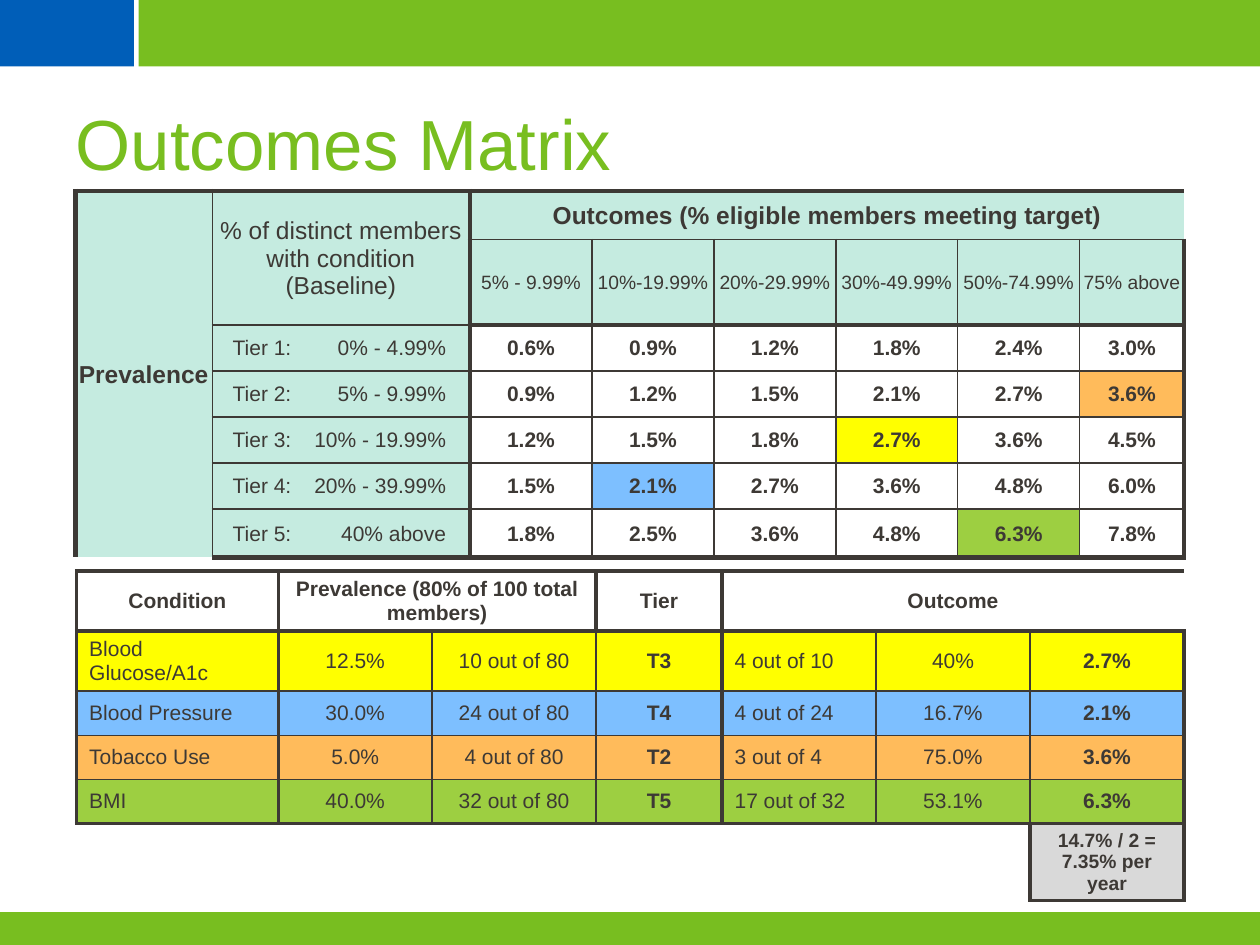
import lxml.etree
import pptx
import pptx.dml.color
import pptx.enum.shapes
import pptx.enum.text
import pptx.oxml.ns
import pptx.util

Pt = pptx.util.Pt
qn = pptx.oxml.ns.qn
ALIGN = pptx.enum.text.PP_ALIGN
MIDDLE = pptx.enum.text.MSO_ANCHOR.MIDDLE
PLAIN = "{2D5ABB26-0587-4C30-8999-92F81FD0307C}"  # no style, no grid

HUES = {
    "green": "78BE20", "blue": "005EB8", "ink": "3D3935", "mint": "C5EBE0",
    "yellow": "FFFF00", "sky": "7DBFFF", "orange": "FFBB5B",
    "lime": "9DCF41", "grey": "D9D9D9",
}
BARS = [("green", (79.2, 0, 640.8, 38)), ("blue", (0, 0, 76.5, 38)),
        ("green", (0, 521.2, 720, 18.8))]

BANDS = ["5% - 9.99%", "10%-19.99%", "20%-29.99%",
         "30%-49.99%", "50%-74.99%", "75% above"]
TIERS = [
    ("Tier 1:\t0% - 4.99%", "0.6% 0.9% 1.2% 1.8% 2.4% 3.0%"),
    ("Tier 2:\t5% - 9.99%", "0.9% 1.2% 1.5% 2.1% 2.7% 3.6%"),
    ("Tier 3:\t10% - 19.99%", "1.2% 1.5% 1.8% 2.7% 3.6% 4.5%"),
    ("Tier 4:\t20% - 39.99%", "1.5% 2.1% 2.7% 3.6% 4.8% 6.0%"),
    ("Tier 5:\t40% above", "1.8% 2.5% 3.6% 4.8% 6.3% 7.8%"),
]
MARKS = {(3, 7): "orange", (4, 5): "yellow", (5, 3): "sky", (6, 6): "lime"}

HEADS = [(0, 1, "Condition"), (1, 2, "Prevalence (80% of 100 total members)"),
         (3, 1, "Tier"), (4, 3, "Outcome")]
CASES = [
    ("yellow", ["Blood Glucose/A1c", "12.5%", "10 out of 80", "T3",
                "4 out of 10", "40%", "2.7%"]),
    ("sky", ["Blood Pressure", "30.0%", "24 out of 80", "T4",
             "4 out of 24", "16.7%", "2.1%"]),
    ("orange", ["Tobacco Use", "5.0%", "4 out of 80", "T2",
                "3 out of 4", "75.0%", "3.6%"]),
    ("lime", ["BMI", "40.0%", "32 out of 80", "T5",
              "17 out of 32", "53.1%", "6.3%"]),
]


def tint(name):
    return pptx.dml.color.RGBColor.from_string(HUES[name])


def apply(item, form):
    for key, value in form.items():
        setattr(item, key, value)


def style(font, hue="ink", **form):
    apply(font, {"name": "Arial", "bold": False, **form})
    font.color.rgb = tint(hue)


def edge(cell, side, width):
    line = lxml.etree.SubElement(cell._tc.get_or_add_tcPr(), qn("a:ln" + side),
                                 w=str(int(Pt(width))))
    fill = lxml.etree.SubElement(line, qn("a:solidFill"))
    lxml.etree.SubElement(fill, qn("a:srgbClr"), val=HUES["ink"])


def make_grid(slide, box, cols, rows):
    frame = slide.shapes.add_table(len(rows), len(cols), *map(Pt, box))
    grid = frame.table
    apply(grid, {"first_row": False, "horz_banding": False})
    grid._tbl.tblPr.find(qn("a:tableStyleId")).text = PLAIN
    for col, width in zip(grid.columns, cols):
        col.width = Pt(width)
    for row, height in zip(grid.rows, rows):
        row.height = Pt(height)
    return grid


def put(grid, row, col, text, rule, span=(1, 1), hue=None, size=12,
        bold=False, align=ALIGN.CENTER, pads=None, tab=None):
    """Fill one cell; rule(axis, row, col) gives the width of a grid line."""
    down, over = span
    cell = grid.cell(row, col)
    if span != (1, 1):
        cell.merge(grid.cell(row + down - 1, col + over - 1))
    # Only the outer edges of a merged area are drawn
    for r in range(row, row + down):
        for c in range(col, col + over):
            part = grid.cell(r, c)
            if c == col:
                edge(part, "L", rule("x", r, c))
            if c == col + over - 1:
                edge(part, "R", rule("x", r, c + 1))
            if r == row:
                edge(part, "T", rule("y", r, c))
            if r == row + down - 1:
                edge(part, "B", rule("y", r + 1, c))
    if hue:
        cell.fill.solid()
        cell.fill.fore_color.rgb = tint(hue)
    else:
        cell.fill.background()
    cell.vertical_anchor = MIDDLE
    for side, gap in (pads or {}).items():
        setattr(cell, "margin_" + side, Pt(gap))
    cell.text_frame.text = text
    para = cell.text_frame.paragraphs[0]
    para.alignment = align
    if tab:
        tabs = lxml.etree.SubElement(para._p.get_or_add_pPr(), qn("a:tabLst"))
        lxml.etree.SubElement(tabs, qn("a:tab"), pos=str(int(Pt(tab))), algn="r")
    for run in para.runs:
        style(run.font, size=Pt(size), bold=bold)
    return cell


def add_bars(slide):
    for hue, box in BARS:
        bar = slide.shapes.add_shape(
            pptx.enum.shapes.MSO_SHAPE.RECTANGLE, *map(Pt, box))
        bar.shadow.inherit = False
        bar.fill.solid()
        bar.fill.fore_color.rgb = tint(hue)
        bar.line.fill.background()


def add_title(slide, box, text):
    title = slide.shapes.title
    apply(title, dict(zip(("left", "top", "width", "height"), map(Pt, box))))
    title.text_frame.text = text
    title.text_frame.vertical_anchor = MIDDLE
    para = title.text_frame.paragraphs[0]
    para.alignment = ALIGN.LEFT
    style(para.runs[0].font, "green", size=Pt(40.5))


def add_matrix(slide, box):
    grid = make_grid(slide, box, [77.8, 147.6] + [69.7] * 5 + [59.7],
                     [27.7, 48.8] + [26.3] * 4 + [27.7])
    pads = {"left": 0.7, "right": 0.7, "top": 0.7, "bottom": 0}

    def rule(axis, row, col):
        if axis == "x":
            return 3 if col in (0, 2, 8) else 0.25 if col == 1 else 1
        return 3 if row in (0, 7) or (row == 2 and col > 1) else 1

    # Heads
    head = {"hue": "mint", "size": 14, "pads": pads}
    side = put(grid, 0, 0, "Prevalence", rule, (7, 1), bold=True, **head)
    side._tc.get_or_add_tcPr().set("vert", "wordArtVert")
    put(grid, 0, 1, "% of distinct members with condition\v(Baseline)",
        rule, (2, 1), **head)
    put(grid, 0, 2, "Outcomes (% eligible members meeting target)",
        rule, (1, 6), bold=True, **head)
    for col, band in enumerate(BANDS, 2):
        put(grid, 1, col, band, rule, hue="mint", size=11, pads=pads)
    # Tiers
    for row, (tier, rates) in enumerate(TIERS, 2):
        put(grid, row, 1, tier, rule, hue="mint", align=ALIGN.LEFT,
            pads={**pads, "left": 12}, tab=122)
        for col, rate in enumerate(rates.split(), 2):
            put(grid, row, col, rate, rule, hue=MARKS.get((row, col)),
                bold=True, pads=pads)


def add_cases(slide, box):
    grid = make_grid(slide, box, [115.2, 88, 93.6, 72, 88, 88, 88],
                     [34.4, 34.4, 25.2, 25.2, 25.2, 44])

    def rule(axis, row, col):
        if axis == "x":
            return 2.25 if col in (0, 1, 4, 7) or row == 5 else 1
        return 2.25 if row in (0, 1, 5, 6) else 1

    # Heads
    for col, over, text in HEADS:
        put(grid, 0, col, text, rule, (1, over), bold=True)
    # Conditions
    for row, (hue, texts) in enumerate(CASES, 1):
        for col, text in enumerate(texts):
            put(grid, row, col, text, rule, hue=hue, bold=col in (3, 6),
                align=ALIGN.LEFT if col in (0, 4) else ALIGN.CENTER)
    # Total
    put(grid, 5, 6, "14.7% / 2 = 7.35% per year", rule, hue="grey",
        size=11, bold=True)


def main():
    deck = pptx.Presentation()
    apply(deck, {"slide_width": Pt(720), "slide_height": Pt(540)})
    slide = deck.slides.add_slide(deck.slide_layouts[5])
    add_bars(slide)
    add_title(slide, (36, 52.6, 648, 56.9), "Outcomes Matrix")
    add_matrix(slide, (43.2, 109.2, 633.6, 209.4))
    add_cases(slide, (43.8, 326.2, 632.8, 188.4))
    deck.save("out.pptx")


if __name__ == "__main__":
    main()
